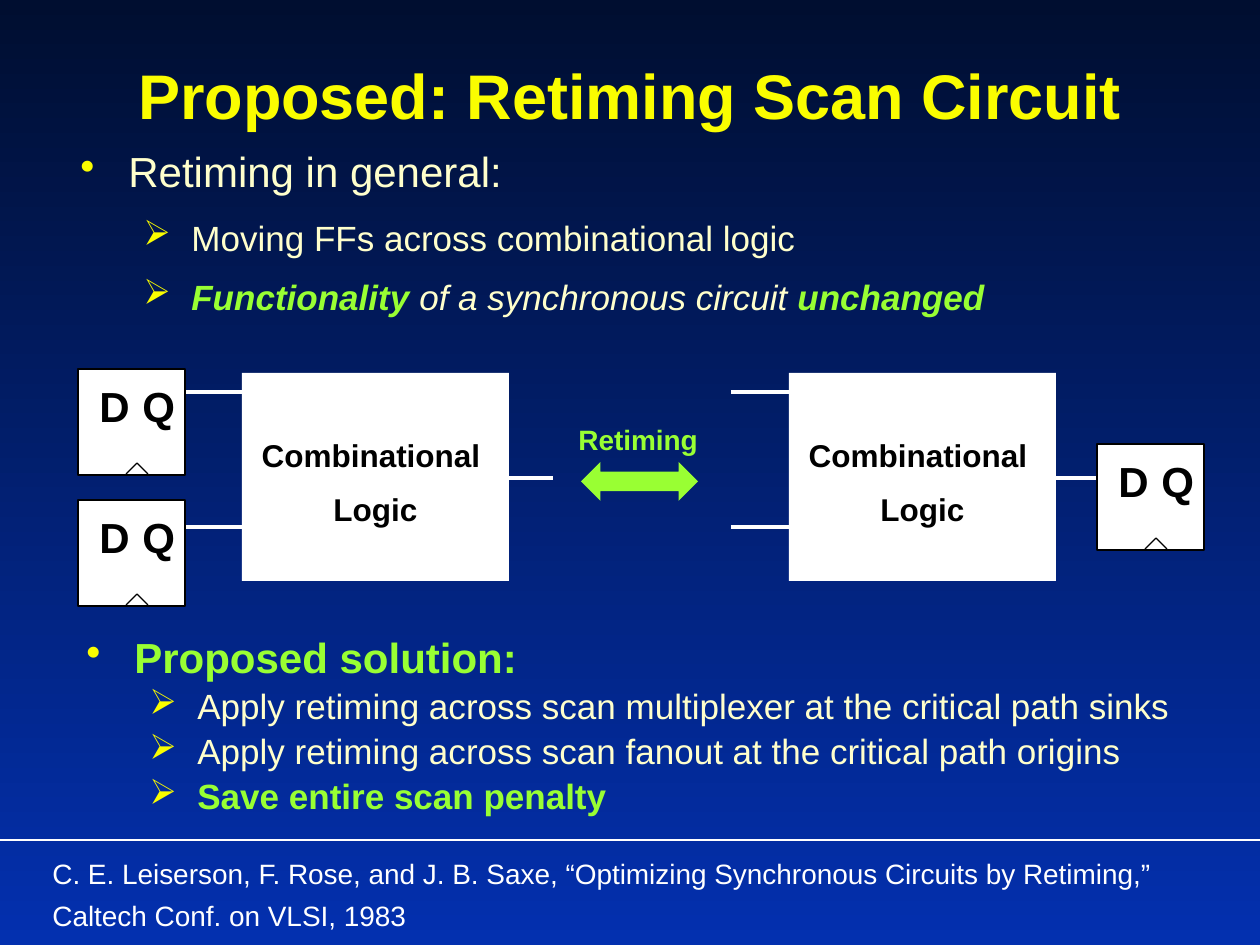
import pptx
import pptx.dml.color
import pptx.enum.shapes
import pptx.enum.text
import pptx.oxml.ns
import pptx.util
import lxml.etree

RGBColor = pptx.dml.color.RGBColor
YELLOW = RGBColor(0xFA, 0xFD, 0x00)
CREAM = RGBColor(0xFF, 0xFF, 0xCC)
GREEN = RGBColor(0x99, 0xFF, 0x33)
WHITE = RGBColor(0xFF, 0xFF, 0xFF)
BLACK = RGBColor(0x00, 0x00, 0x00)
NIGHT = RGBColor(0x00, 0x0E, 0x30)
BLUE = RGBColor(0x03, 0x30, 0xAF)

SHAPE = pptx.enum.shapes.MSO_SHAPE
STRAIGHT = pptx.enum.shapes.MSO_CONNECTOR.STRAIGHT
ANCHOR = pptx.enum.text.MSO_ANCHOR
ALIGN = pptx.enum.text.PP_ALIGN
PX_PER_INCH = 126
HANGING = 48


def px(length):
    return pptx.util.Emu(round(length * 914400 / PX_PER_INCH))


def add_child(parent, tag, **attributes):
    return lxml.etree.SubElement(parent, pptx.oxml.ns.qn(tag), attributes)


class SlideBuilder:
    font = "Arial"

    def __init__(self, slide):
        self.slide = slide

    def background(self, top, bottom):
        fill = self.slide.background.fill
        fill.gradient()
        fill.gradient_angle = 270
        for stop, color in zip(fill.gradient_stops, (top, bottom)):
            stop.color.rgb = color

    def paragraph(self, frame, runs, size, align=ALIGN.LEFT, spacing=1.25,
                  indent=0, bullet=None):
        para = frame.paragraphs[0]
        if para.runs:
            para = frame.add_paragraph()
        para.alignment = align
        para.line_spacing = spacing
        para.space_before = pptx.util.Pt(round(size * 0.2, 1))
        properties = para._p.get_or_add_pPr()
        if indent:
            properties.set("marL", str(px(indent)))
            properties.set("indent", str(px(-HANGING)))
        if bullet:
            color = add_child(properties, "a:buClr")
            add_child(color, "a:srgbClr", val=str(YELLOW))
            add_child(properties, "a:buChar", char=bullet)
        for text, color, bold, italic in runs:
            span = para.add_run()
            span.text = text
            span.font.name = self.font
            span.font.size = pptx.util.Pt(size)
            span.font.color.rgb = color
            span.font.bold = bold
            span.font.italic = italic
        return para

    def text_box(self, left, top, width, height, wrap=True, anchor=ANCHOR.TOP):
        box = self.slide.shapes.add_textbox(px(left), px(top), px(width), px(height))
        box.text_frame.word_wrap = wrap
        box.text_frame.vertical_anchor = anchor
        return box.text_frame

    def label(self, place, text, size, color, bold=True, align=ALIGN.LEFT,
              wrap=False, anchor=ANCHOR.TOP):
        frame = self.text_box(*place, wrap=wrap, anchor=anchor)
        self.paragraph(frame, [(text, color, bold, False)], size, align)

    def bullets(self, place, heading, items):
        frame = self.text_box(*place)
        self.paragraph(frame, [heading], 24, spacing=0.9, indent=HANGING, bullet="•")
        for spacing, runs in items:
            para = self.paragraph(frame, runs, 20, spacing=spacing, indent=111, bullet="➢")
            para.level = 1

    def shape(self, kind, left, top, width, height, fill, line=None):
        shape = self.slide.shapes.add_shape(kind, px(left), px(top), px(width), px(height))
        shape.shadow.inherit = False
        shape.fill.solid()
        shape.fill.fore_color.rgb = fill
        if line is None:
            shape.line.fill.background()
        else:
            shape.line.color.rgb = line
            shape.line.width = pptx.util.Pt(0.75)
        return shape

    def line(self, x1, y1, x2, y2, color=WHITE, width=2.25):
        line = self.slide.shapes.add_connector(STRAIGHT, px(x1), px(y1), px(x2), px(y2))
        line.line.color.rgb = color
        line.line.width = pptx.util.Pt(width)
        add_child(line._element.spPr, "a:effectLst")

    def logic_block(self, left):
        block = self.shape(SHAPE.RECTANGLE, left, 373, 267, 208, WHITE)
        frame = block.text_frame
        frame.word_wrap = True
        frame.vertical_anchor = ANCHOR.MIDDLE
        for word in ("Combinational ", "Logic"):
            self.paragraph(frame, [(word, BLACK, True, False)], 18, ALIGN.CENTER,
                           indent=HANGING)
        for y in (392, 527):
            self.line(left - 58, y, left, y)
        self.line(left + 267, 478, left + 311, 478)

    def flip_flop(self, left, top):
        self.shape(SHAPE.RECTANGLE, left, top, 107, 106, WHITE, BLACK)
        for letter, offset in (("D", 9), ("Q", 52)):
            self.label((left + offset, top - 7, 55, 73), letter, 24, BLACK)
        apex = left + 59
        for foot in (apex - 11, apex + 11):
            self.line(foot, top + 105, apex, top + 94, BLACK, 0.75)


def main():
    deck = pptx.Presentation()
    deck.slide_width = px(1260)
    deck.slide_height = px(945)
    page = SlideBuilder(deck.slides.add_slide(deck.slide_layouts[6]))
    page.background(NIGHT, BLUE)

    page.label((0, 47, 1260, 91), "Proposed: Retiming Scan Circuit", 36, YELLOW,
               align=ALIGN.CENTER, wrap=True, anchor=ANCHOR.BOTTOM)
    page.bullets((68, 145, 1095, 189), ("Retiming in general:", CREAM, False, False), [
        (1.3, [("Moving FFs across combinational logic", CREAM, False, False)]),
        (1.25, [("Functionality ", GREEN, True, True),
                ("of a synchronous circuit ", CREAM, False, True),
                ("unchanged", GREEN, True, True)]),
    ])

    for left in (242, 789):
        page.logic_block(left)
    for left, top in ((78, 369), (78, 500), (1097, 444)):
        page.flip_flop(left, top)
    page.label((566, 408, 146, 54), "Retiming", 16, GREEN)
    page.shape(SHAPE.LEFT_RIGHT_ARROW, 581, 462, 117, 39, GREEN)

    page.bullets((74, 631, 1123, 202), ("Proposed solution:", GREEN, True, False), [
        (0.9, [("Apply retiming across scan multiplexer at the critical path sinks",
                CREAM, False, False)]),
        (0.9, [("Apply retiming across scan fanout at the critical path origins",
                CREAM, False, False)]),
        (0.9, [("Save entire scan penalty", GREEN, True, False)]),
    ])
    page.line(0, 840, 1260, 840, width=0.75)
    page.label((40, 842, 1139, 96),
               "C. E. Leiserson, F. Rose, and J. B. Saxe, “Optimizing Synchronous "
               "Circuits by Retiming,” Caltech Conf. on VLSI, 1983",
               16, WHITE, bold=False, wrap=True)
    deck.save("out.pptx")


if __name__ == "__main__":
    main()
